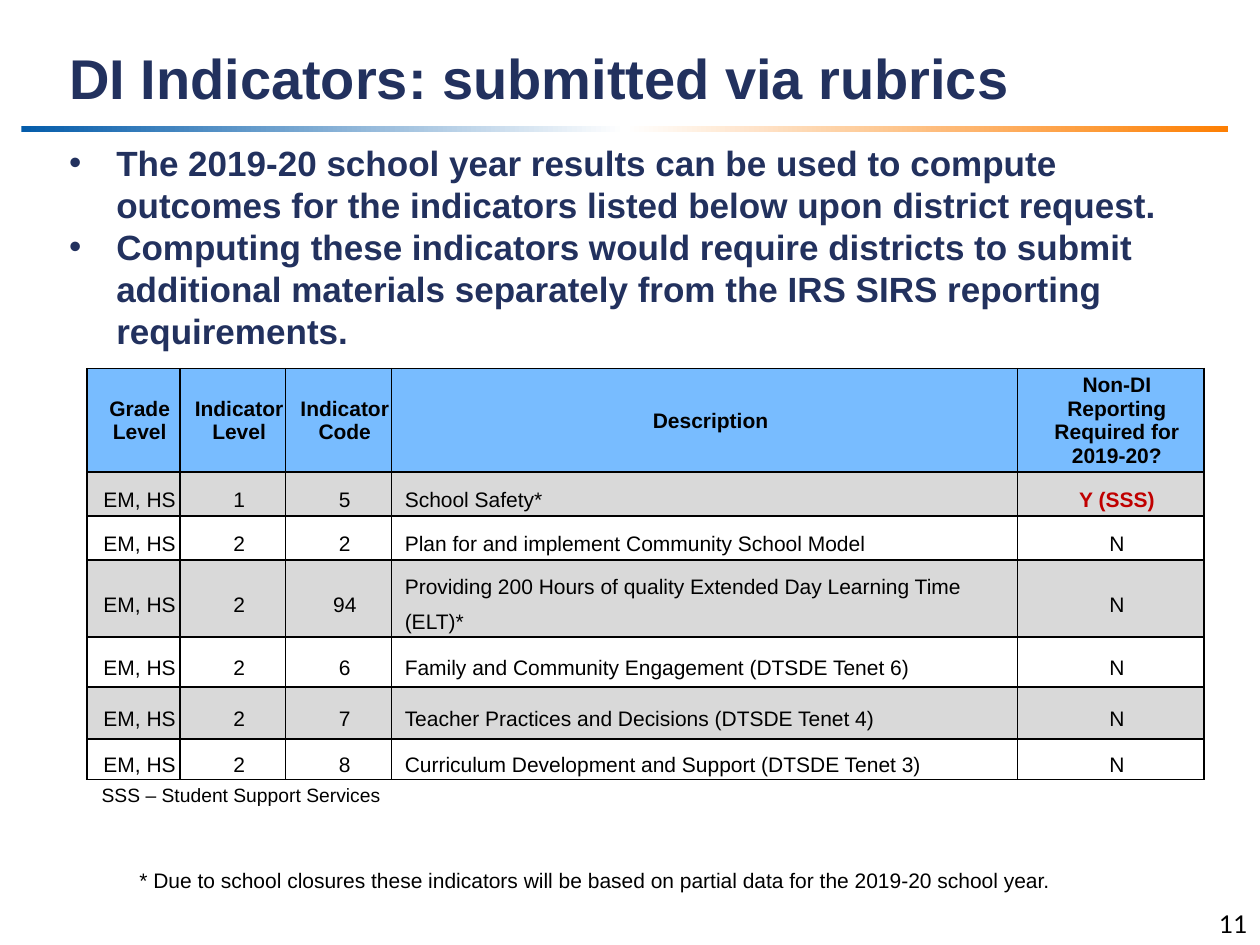
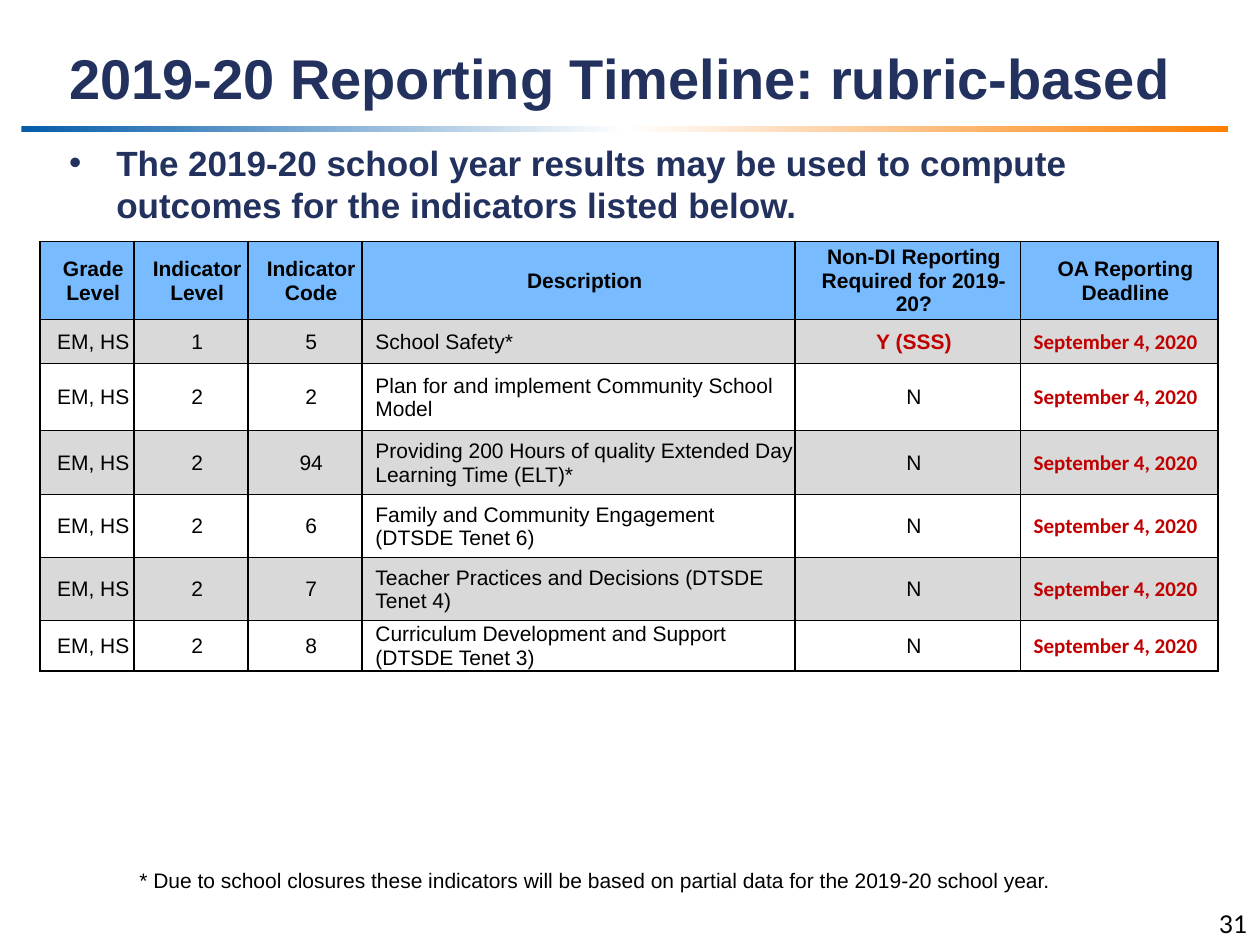
import copy
import dataclasses
import typing

import lxml.etree
import pptx
import pptx.dml.color
import pptx.enum.shapes
import pptx.enum.text
import pptx.oxml.ns
import pptx.presentation
import pptx.slide
import pptx.table
import pptx.text.text
import pptx.util

Cm = pptx.util.Cm
Align = pptx.enum.text.PP_ALIGN
Anchor = pptx.enum.text.MSO_ANCHOR
qn = pptx.oxml.ns.qn


@dataclasses.dataclass(frozen=True)
class TextStyle:
    size: float
    color: str = "000000"
    bold: bool = False
    font: str = "Arial"


@dataclasses.dataclass(frozen=True)
class Theme:
    title: TextStyle = TextStyle(32, "22315E", True)
    bullet: TextStyle = TextStyle(20, "22315E", True)
    header: TextStyle = TextStyle(12, bold=True)
    cell: TextStyle = TextStyle(12)
    alert: TextStyle = TextStyle(12, "C00000", True)
    deadline: TextStyle = TextStyle(12, "C00000", True, "Calibri")
    footnote: TextStyle = TextStyle(12)
    legend: TextStyle = TextStyle(11)
    number: TextStyle = TextStyle(14, font="Lato")
    header_fill: str = "78BCFF"
    stripe_fill: str = "D9D9D9"
    border: str = "000000"
    band: tuple[str, ...] = ("045CAA", "FFFFFF", "FD7F03")


THEME = Theme()


class Place(typing.NamedTuple):
    left: float
    top: float
    width: float
    height: float

    def lengths(self) -> list[pptx.util.Length]:
        return [Cm(value) for value in self]


class Indicator(typing.NamedTuple):
    level: str
    code: str
    description: str
    required: str = "N"


@dataclasses.dataclass(frozen=True)
class IndicatorTable:
    left: float
    top: float
    columns: list[float]
    rows: list[float]
    line_spacing: float = 1.0
    deadline: str = ""


@dataclasses.dataclass(frozen=True)
class Page:
    title: str
    number: str
    bullets: list[str]
    bullet_height: float
    table: IndicatorTable
    legend: str = ""


BAND = Place(0.43, 2.54, 24.33, 0.13)
TITLE = Place(1.14, 0, 23.14, 2.36)
NUMBER = Place(19.48, 18.21, 5.92, 0.84)
FOOTNOTE = Place(2.56, 17.37, 21.72, 0.76)
LEGEND = Place(1.8, 15.67, 21.84, 0.74)
FOOTNOTE_TEXT = (
    "* Due to school closures these indicators will be based on partial data "
    "for the 2019-20 school year."
)
GRADES = "EM, HS"
HEADINGS = [
    "Grade Level",
    "Indicator Level",
    "Indicator Code",
    "Description",
    "Non-DI Reporting Required for 2019-20?",
    "OA Reporting Deadline",
]
INDICATORS = [
    Indicator("1", "5", "School Safety*", "Y (SSS)"),
    Indicator("2", "2", "Plan for and implement Community School Model"),
    Indicator("2", "94", "Providing 200 Hours of quality Extended Day Learning Time (ELT)*"),
    Indicator("2", "6", "Family and Community Engagement (DTSDE Tenet 6)"),
    Indicator("2", "7", "Teacher Practices and Decisions (DTSDE Tenet 4)"),
    Indicator("2", "8", "Curriculum Development and Support (DTSDE Tenet 3)"),
]
PAGES = [
    Page(
        "DI Indicators: submitted via rubrics",
        "11",
        [
            "The 2019-20 school year results can be used to compute outcomes "
            "for the indicators listed below upon district request.",
            "Computing these indicators would require districts to submit additional "
            "materials separately from the IRS SIRS reporting requirements.",
        ],
        4.52,
        IndicatorTable(
            1.75,
            7.43,
            [1.88, 2.13, 2.13, 12.62, 3.76],
            [2.08, 0.89, 0.89, 1.55, 1.01, 1.05, 0.81],
            line_spacing=1.5,
        ),
        "SSS – Student Support Services",
    ),
    Page(
        "2019-20 Reporting Timeline: rubric-based",
        "31",
        [
            "The 2019-20 school year results may be used to compute outcomes "
            "for the indicators listed below.",
        ],
        1.96,
        IndicatorTable(
            0.81,
            4.87,
            [1.89, 2.3, 2.3, 8.73, 4.54, 3.99],
            [1.57, 0.89, 1.35, 1.29, 1.27, 1.27, 1.02],
            deadline="September 4, 2020",
        ),
    ),
]


def rgb(color: str) -> pptx.dml.color.RGBColor:
    return pptx.dml.color.RGBColor.from_string(color)


def add_span(para: pptx.text.text._Paragraph, text: str, style: TextStyle) -> None:
    span = para.add_run()
    span.text = text
    span.font.name = style.font
    span.font.size = pptx.util.Pt(style.size)
    span.font.bold = style.bold
    span.font.color.rgb = rgb(style.color)


def set_place(box: typing.Any, place: Place) -> None:
    box.left, box.top, box.width, box.height = place.lengths()


def add_label(
    page: pptx.slide.Slide, place: Place, text: str, style: TextStyle, align: Align = Align.LEFT
) -> None:
    frame = page.shapes.add_textbox(*place.lengths()).text_frame
    frame.word_wrap = True
    para = frame.paragraphs[0]
    para.alignment = align
    add_span(para, text, style)


def add_band(page: pptx.slide.Slide) -> None:
    band = page.shapes.add_shape(pptx.enum.shapes.MSO_SHAPE.RECTANGLE, *BAND.lengths())
    band.shadow.inherit = False
    band.line.fill.background()
    band.fill.gradient()
    band.fill.gradient_angle = 0
    stops = next(band.element.iter(qn("a:gsLst")))
    stops.append(copy.deepcopy(stops[-1]))
    for index, (stop, color) in enumerate(zip(band.fill.gradient_stops, THEME.band)):
        stop.color.rgb = rgb(color)
        stop.position = index / (len(THEME.band) - 1)


def fill_title(page: pptx.slide.Slide, text: str) -> None:
    box = page.shapes.title
    set_place(box, TITLE)
    frame = box.text_frame
    frame.auto_size = pptx.enum.text.MSO_AUTO_SIZE.NONE
    frame.vertical_anchor = Anchor.BOTTOM
    para = frame.paragraphs[0]
    para.alignment = Align.LEFT
    para.line_spacing = pptx.util.Pt(36)
    add_span(para, text, THEME.title)


def fill_bullets(page: pptx.slide.Slide, bullets: list[str], height: float) -> None:
    box = page.placeholders[1]
    set_place(box, Place(1.14, 2.72, 23.44, height))
    frame = box.text_frame
    frame.auto_size = pptx.enum.text.MSO_AUTO_SIZE.NONE
    for index, text in enumerate(bullets):
        para = frame.add_paragraph() if index else frame.paragraphs[0]
        properties = para._p.get_or_add_pPr()
        properties.set("marL", str(Cm(0.95)))
        properties.set("indent", str(Cm(-0.95)))
        lxml.etree.SubElement(properties, qn("a:buFont"), typeface="Arial")
        lxml.etree.SubElement(properties, qn("a:buChar"), char="•")
        para.space_before = pptx.util.Pt(0)
        add_span(para, text, THEME.bullet)


def add_borders(cell: pptx.table._Cell) -> None:
    properties = cell._tc.get_or_add_tcPr()
    for index, side in enumerate(("a:lnL", "a:lnR", "a:lnT", "a:lnB")):
        line = lxml.etree.Element(qn(side), w=str(pptx.util.Pt(1)))
        solid = lxml.etree.SubElement(line, qn("a:solidFill"))
        lxml.etree.SubElement(solid, qn("a:srgbClr"), val=THEME.border)
        properties.insert(index, line)


def fill_cell(
    cell: pptx.table._Cell,
    text: str,
    style: TextStyle,
    fill: str,
    align: Align,
    line_spacing: float,
) -> None:
    cell.margin_left = cell.margin_right = cell.margin_top = Cm(0.02)
    cell.margin_bottom = Cm(0)
    cell.vertical_anchor = Anchor.MIDDLE
    if fill:
        cell.fill.solid()
        cell.fill.fore_color.rgb = rgb(fill)
    else:
        cell.fill.background()
    add_borders(cell)
    para = cell.text_frame.paragraphs[0]
    para._p.get_or_add_pPr().set("marL", str(Cm(0.25)))
    para.alignment = align
    para.line_spacing = line_spacing
    add_span(para, text, style)


def add_indicator_table(page: pptx.slide.Slide, layout: IndicatorTable) -> None:
    place = Place(layout.left, layout.top, sum(layout.columns), sum(layout.rows))
    table = page.shapes.add_table(
        len(layout.rows), len(layout.columns), *place.lengths()
    ).table
    table.first_row = table.horz_banding = False
    for column, width in zip(table.columns, layout.columns):
        column.width = Cm(width)
    for row, height in zip(table.rows, layout.rows):
        row.height = Cm(height)
    for cell, heading in zip(table.rows[0].cells, HEADINGS):
        fill_cell(cell, heading, THEME.header, THEME.header_fill, Align.CENTER, 1.0)
    for number, indicator in enumerate(INDICATORS, start=1):
        fill = THEME.stripe_fill if number % 2 else ""
        required_style = THEME.cell if indicator.required == "N" else THEME.alert
        entries = [
            (GRADES, THEME.cell, Align.CENTER),
            (indicator.level, THEME.cell, Align.CENTER),
            (indicator.code, THEME.cell, Align.CENTER),
            (indicator.description, THEME.cell, Align.LEFT),
            (indicator.required, required_style, Align.CENTER),
            (layout.deadline, THEME.deadline, Align.LEFT),
        ]
        for cell, (text, style, align) in zip(table.rows[number].cells, entries):
            fill_cell(cell, text, style, fill, align, layout.line_spacing)


def add_page(deck: pptx.presentation.Presentation, content: Page) -> None:
    page = deck.slides.add_slide(deck.slide_layouts[1])
    add_band(page)
    fill_title(page, content.title)
    fill_bullets(page, content.bullets, content.bullet_height)
    add_indicator_table(page, content.table)
    add_label(page, FOOTNOTE, FOOTNOTE_TEXT, THEME.footnote)
    add_label(page, NUMBER, content.number, THEME.number, Align.RIGHT)
    if content.legend:
        add_label(page, LEGEND, content.legend, THEME.legend)


def main() -> None:
    deck = pptx.Presentation()
    deck.slide_width, deck.slide_height = Cm(25.4), Cm(19.05)
    for content in PAGES:
        add_page(deck, content)
    deck.save("out.pptx")


if __name__ == "__main__":
    main()
